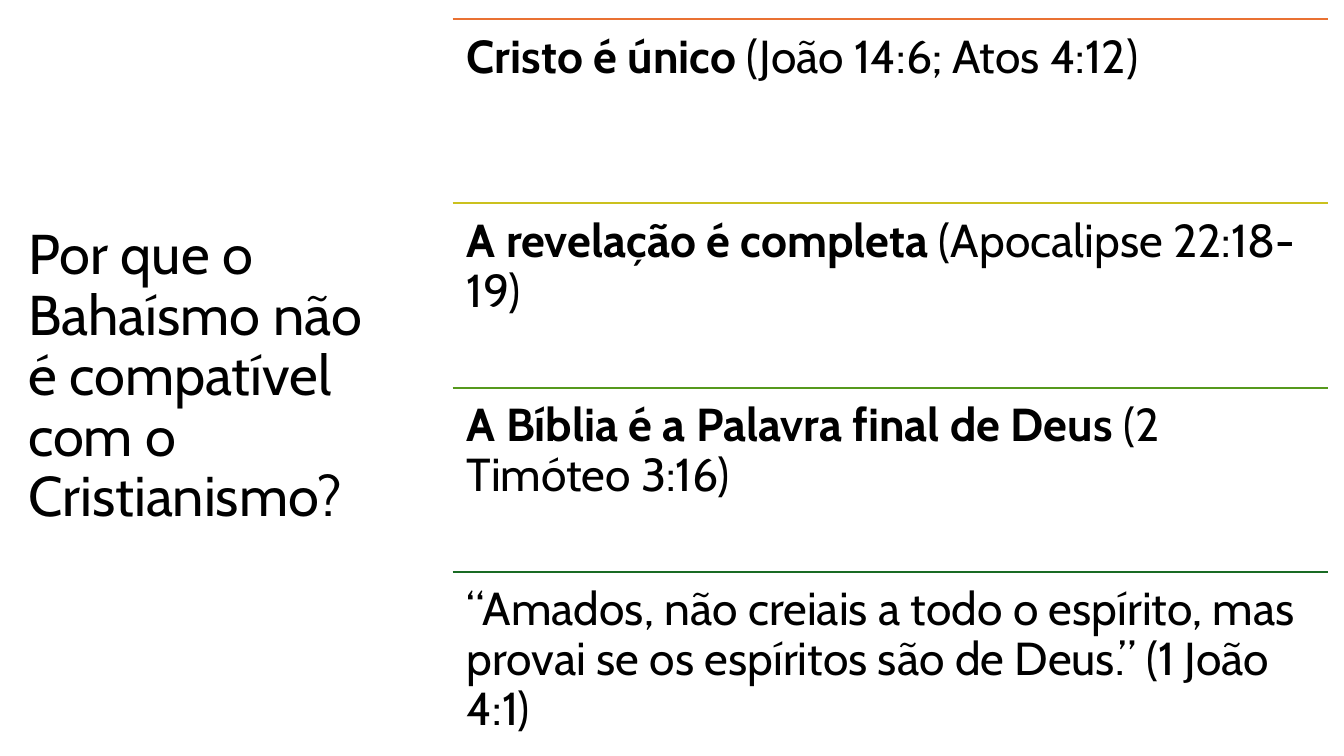
"""Build the slide on why Bahaísmo and Christianity are not compatible."""
from lxml import etree
from pptx import Presentation
from pptx.dml.color import RGBColor
from pptx.enum.shapes import MSO_CONNECTOR
from pptx.enum.text import MSO_ANCHOR, MSO_AUTO_SIZE, PP_ALIGN
from pptx.oxml.ns import qn
from pptx.util import Inches, Pt


def rgb(value):
    return RGBColor.from_string(value)


def style(p, size):
    p.alignment = PP_ALIGN.LEFT
    p.line_spacing = 0.9
    p.font.name = "Cabin"
    p.font.size = Pt(size)
    p.font.color.rgb = rgb("000000")


prs = Presentation()
prs.slide_width, prs.slide_height = Inches(13.33), Inches(7.5)
s = prs.slides.add_slide(prs.slide_layouts[5])
s.background.fill.solid()
s.background.fill.fore_color.rgb = rgb("FFFFFF")

title = s.shapes.title
title.left, title.top = Inches(0.18), Inches(0.58)
title.width, title.height = Inches(3.82), Inches(6.33)
tf = title.text_frame
tf.text = "Por que o Bahaísmo não é compatível com o Cristianismo?"
tf.word_wrap = True
tf.auto_size = MSO_AUTO_SIZE.NONE
tf.vertical_anchor = MSO_ANCHOR.MIDDLE
style(tf.paragraphs[0], 40)

reasons = [
    ("E97132", "Cristo é único", " (João 14:6; Atos 4:12)"),
    ("CBC11E", "A revelação é completa", " (Apocalipse 22:18-19)"),
    ("56991D", "A Bíblia é a Palavra final de Deus", " (2 Timóteo 3:16)"),
    ("196B24", "", "“Amados, não creiais a todo o espírito, mas provai "
                   "se os espíritos são de Deus.” (1 João 4:1)"),
]
left, top, width = Inches(4.49), Inches(0.19), Inches(8.68)
row_height = (prs.slide_height - top) // len(reasons)
inset = Inches(0.14)

for row, (color, claim, reference) in enumerate(reasons):
    y = top + row * row_height
    rule = s.shapes.add_connector(MSO_CONNECTOR.STRAIGHT, left, y, left + width, y)
    rule.line.color.rgb = rgb(color)
    rule.line.width = Pt(1.5)
    etree.SubElement(rule._element.spPr, qn("a:effectLst"))

    tf = s.shapes.add_textbox(left, y, width, row_height).text_frame
    tf.word_wrap = True
    tf.margin_left = tf.margin_right = tf.margin_top = tf.margin_bottom = inset
    p = tf.paragraphs[0]
    style(p, 33)
    for text, bold in ((claim, True), (reference, False)):
        if text:
            r = p.add_run()
            r.text = text
            r.font.bold = bold

prs.save("out.pptx")
